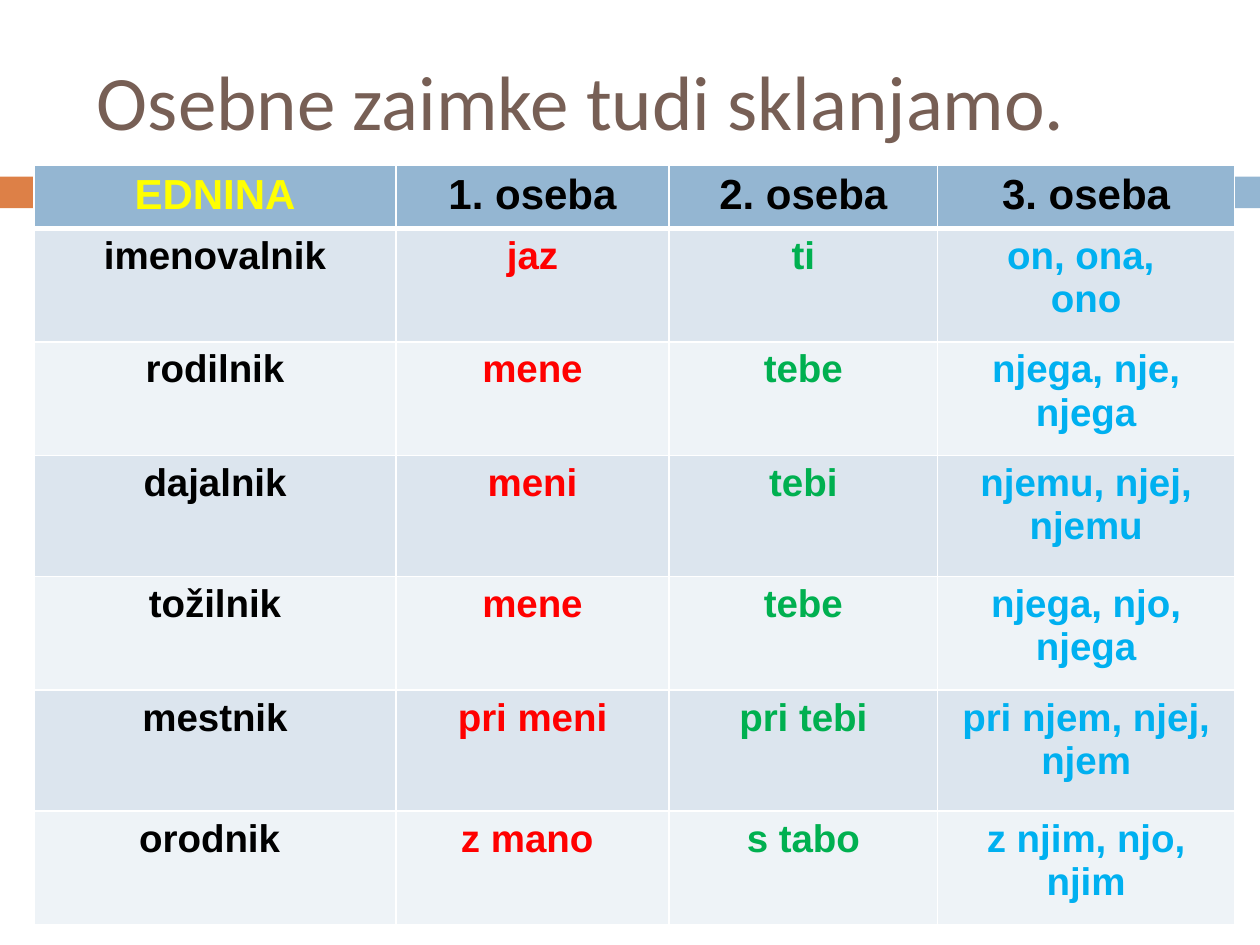
import lxml.etree
import pptx
import pptx.dml.color
import pptx.enum.shapes
import pptx.enum.text
import pptx.oxml.ns
import pptx.util

Cm = pptx.util.Cm
ALIGN = pptx.enum.text.PP_ALIGN

BLUE, ORANGE, BROWN = "94B6D2", "DD8047", "775F55"
WHITE, BLACK, YELLOW = "FFFFFF", "000000", "FFFF00"
BAND_FILLS = ("DCE5EE", "EEF3F7")
COLUMN_COLORS = (BLACK, "FF0000", "00B050", "00B0F0")

COLUMN_WIDTHS = (7.29, 5.51, 5.41, 5.99)
ROW_HEIGHTS = (1.27, 2.29, 2.29, 2.44, 2.29, 2.44, 2.29)
DECLENSION = (
    ("EDNINA", "1. oseba", "2. oseba", "3. oseba"),
    ("imenovalnik", "jaz", "ti", "on, ona, \nono"),
    ("rodilnik", "mene", "tebe", "njega, nje, njega"),
    ("dajalnik", "meni", "tebi", "njemu, njej,\nnjemu"),
    ("tožilnik", "mene", "tebe", "njega, njo,\nnjega"),
    ("mestnik", "pri meni", "pri tebi", "pri njem, njej, njem"),
    ("orodnik ", "z mano ", "s tabo", "z njim, njo,\nnjim"),
)


def color(hex_value):
    return pptx.dml.color.RGBColor.from_string(hex_value)


def format_text(text_frame, alignment, hex_color, **font_values):
    for paragraph in text_frame.paragraphs:
        paragraph.alignment = alignment
        for run in paragraph.runs:
            run.font.color.rgb = color(hex_color)
            for name, value in font_values.items():
                setattr(run.font, name, value)


def set_title(slide, text):
    title = slide.shapes.title
    box = {"left": 1.7, "top": 0.64, "width": 22.66, "height": 2.74}
    for name, value in box.items():
        setattr(title, name, Cm(value))
    title.text_frame.text = text
    title.text_frame.vertical_anchor = pptx.enum.text.MSO_ANCHOR.MIDDLE
    format_text(title.text_frame, ALIGN.LEFT, BROWN,
                name="Calibri", size=pptx.util.Pt(44))


def add_bar(slide, left, width, hex_color):
    bar = slide.shapes.add_shape(
        pptx.enum.shapes.MSO_SHAPE.RECTANGLE,
        Cm(left), Cm(3.56), Cm(width), Cm(0.64))
    bar.shadow.inherit = False
    bar.fill.solid()
    bar.fill.fore_color.rgb = color(hex_color)
    bar.line.fill.background()


def set_borders(cell, widths):
    """Draw white borders; widths maps each side (L, R, T, B) to points."""
    properties = cell._tc.get_or_add_tcPr()
    qn = pptx.oxml.ns.qn
    for side, width in widths.items():
        line = lxml.etree.SubElement(
            properties, qn(f"a:ln{side}"), w=str(pptx.util.Pt(width)))
        fill = lxml.etree.SubElement(line, qn("a:solidFill"))
        lxml.etree.SubElement(fill, qn("a:srgbClr"), val=WHITE)


def fill_cell(cell, text, row, column):
    is_header = row == 0
    set_borders(cell, {"L": 1, "R": 1, "T": 3 if row == 1 else 1,
                       "B": 3 if is_header else 1})
    cell.fill.solid()
    cell.fill.fore_color.rgb = color(
        BLUE if is_header else BAND_FILLS[(row - 1) % 2])
    cell.text_frame.text = text
    if is_header:
        text_color = YELLOW if column == 0 else BLACK
    else:
        text_color = COLUMN_COLORS[column]
    format_text(cell.text_frame, ALIGN.CENTER, text_color, name="Arial",
                bold=True, size=pptx.util.Pt(24 if is_header else 22))


def add_declension_table(slide):
    table = slide.shapes.add_table(
        len(ROW_HEIGHTS), len(COLUMN_WIDTHS), Cm(0.69), Cm(3.33),
        Cm(sum(COLUMN_WIDTHS)), Cm(sum(ROW_HEIGHTS))).table
    for column, width in zip(table.columns, COLUMN_WIDTHS):
        column.width = Cm(width)
    for row, height in zip(table.rows, ROW_HEIGHTS):
        row.height = Cm(height)
    for row, texts in enumerate(DECLENSION):
        for column, text in enumerate(texts):
            fill_cell(table.cell(row, column), text, row, column)


def main():
    presentation = pptx.Presentation()
    presentation.slide_width = Cm(25.4)
    presentation.slide_height = Cm(19.05)
    slide = presentation.slides.add_slide(presentation.slide_layouts[5])
    set_title(slide, "Osebne zaimke tudi sklanjamo.")
    add_bar(slide, 0, 1.47, ORANGE)
    add_bar(slide, 1.65, 23.75, BLUE)
    add_declension_table(slide)
    presentation.save("out.pptx")


if __name__ == "__main__":
    main()
